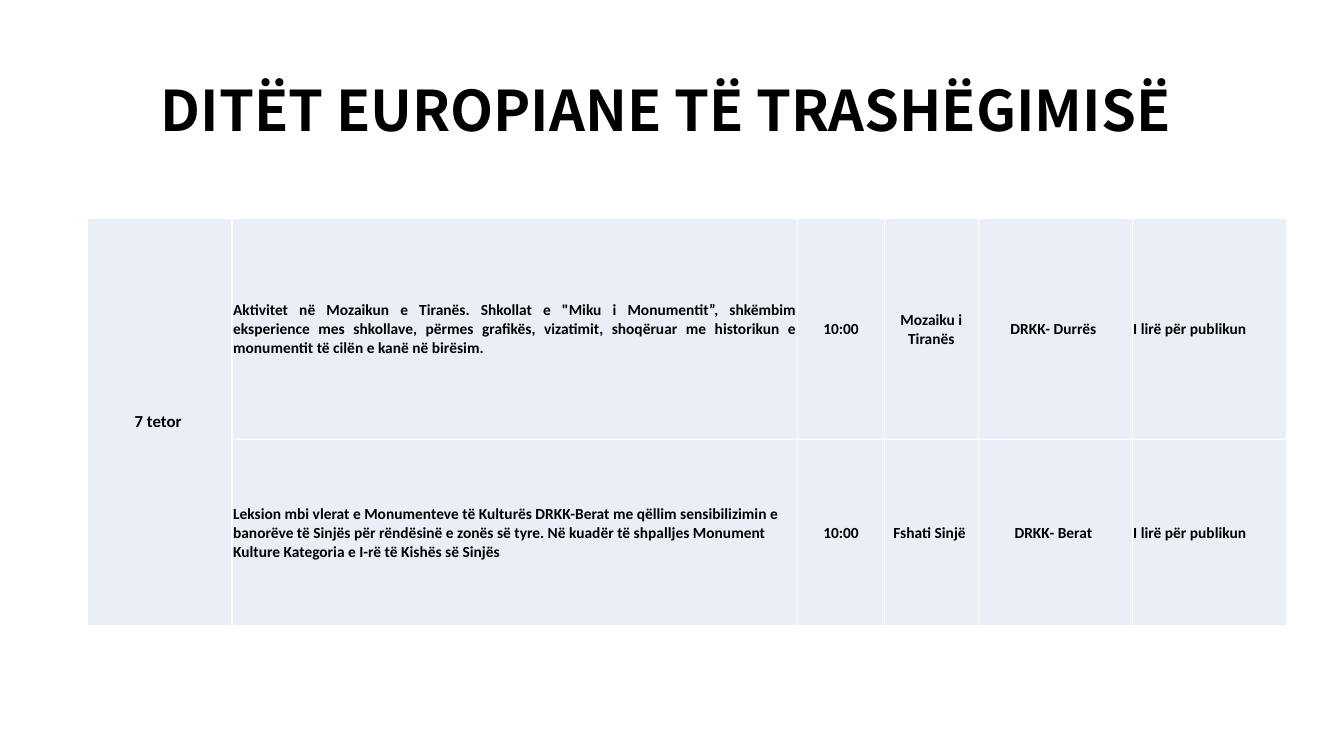
from lxml import etree
from pptx import Presentation
from pptx.dml.color import RGBColor
from pptx.enum import text
from pptx.oxml.ns import qn
from pptx.util import Pt

# Content
TITLE = "DITËT EUROPIANE TË TRASHËGIMISË "
DATE = "7 tetor "
EVENTS = [
    ('Aktivitet në Mozaikun e Tiranës. Shkollat e "Miku i Monumentit”, shkëmbim '
     "eksperience mes shkollave, përmes grafikës, vizatimit, shoqëruar me historikun "
     "e monumentit të cilën e kanë në birësim.",
     "10:00", "Mozaiku i Tiranës", "DRKK- Durrës ", "I lirë për publikun"),
    ("Leksion mbi vlerat e Monumenteve të Kulturës DRKK-Berat me qëllim sensibilizimin "
     "e banorëve të Sinjës për rëndësinë e zonës së tyre. Në kuadër të shpalljes "
     "Monument Kulture Kategoria e I-rë të Kishës së Sinjës",
     "10:00", "Fshati Sinjë ", "DRKK- Berat ", "I lirë për publikun"),
]

# Theme and layout
THEME = {
    "title_font": "Noto Sans CJK KR", "body_font": "Calibri",
    "title_size": 40, "date_size": 12, "event_size": 11,
    "ink": "000000", "cell": "EAEFF7", "border": "FFFFFF",
}
SLIDE_SIZE = (960, 540)
TITLE_BOX = (66, 28.75, 828, 104.4)
SCHEDULE_AT = (62.8, 155.8)
COLUMN_WIDTHS = (103, 404, 62, 67, 110, 110)
ROW_HEIGHTS = (158.4, 132.4)
LEFT, CENTER, JUSTIFY = (text.PP_ALIGN.LEFT, text.PP_ALIGN.CENTER, text.PP_ALIGN.JUSTIFY)
EVENT_ALIGN = [
    (JUSTIFY, CENTER, CENTER, CENTER, LEFT),
    (LEFT, CENTER, CENTER, CENTER, LEFT),
]


def format_text(frame, font_name, size, align):
    paragraph = frame.paragraphs[0]
    paragraph.alignment = align
    font = paragraph.runs[0].font
    font.name, font.size, font.bold = font_name, Pt(size), True
    font.color.rgb = RGBColor.from_string(THEME["ink"])


def style_cell(cell):
    cell.vertical_anchor = text.MSO_ANCHOR.MIDDLE
    cell.margin_left = cell.margin_right = cell.margin_top = Pt(0.75)
    cell.margin_bottom = 0
    # Borders come before the fill in the cell properties
    properties = cell._tc.get_or_add_tcPr()
    for side in ("lnL", "lnR", "lnT", "lnB"):
        border = etree.SubElement(properties, qn(f"a:{side}"), w=str(Pt(1)))
        solid = etree.SubElement(border, qn("a:solidFill"))
        etree.SubElement(solid, qn("a:srgbClr"), val=THEME["border"])
    cell.fill.solid()
    cell.fill.fore_color.rgb = RGBColor.from_string(THEME["cell"])


def fill_cell(cell, words, size, align):
    cell.text_frame.text = words
    format_text(cell.text_frame, THEME["body_font"], size, align)


def main():
    deck = Presentation()
    deck.slide_width, deck.slide_height = map(Pt, SLIDE_SIZE)
    slide = deck.slides.add_slide(deck.slide_layouts[5])

    # Title
    title = slide.shapes.title
    title.left, title.top, title.width, title.height = map(Pt, TITLE_BOX)
    title.text_frame.text = TITLE
    title.text_frame.vertical_anchor = text.MSO_ANCHOR.MIDDLE
    title.text_frame.paragraphs[0].line_spacing = 0.9
    format_text(title.text_frame, THEME["title_font"], THEME["title_size"], CENTER)

    # Schedule grid
    schedule = slide.shapes.add_table(
        len(ROW_HEIGHTS), len(COLUMN_WIDTHS), *map(Pt, SCHEDULE_AT),
        Pt(sum(COLUMN_WIDTHS)), Pt(sum(ROW_HEIGHTS))).table
    schedule.first_row = schedule.horz_banding = False
    for column, width in zip(schedule.columns, COLUMN_WIDTHS):
        column.width = Pt(width)
    for row, height in zip(schedule.rows, ROW_HEIGHTS):
        row.height = Pt(height)
    for cell in schedule.iter_cells():
        style_cell(cell)

    # Date spanning both events
    date = schedule.cell(0, 0)
    date.merge(schedule.cell(len(EVENTS) - 1, 0))
    fill_cell(date, DATE, THEME["date_size"], CENTER)

    # Events
    for r, (event, aligns) in enumerate(zip(EVENTS, EVENT_ALIGN)):
        for c, (words, align) in enumerate(zip(event, aligns), start=1):
            fill_cell(schedule.cell(r, c), words, THEME["event_size"], align)

    deck.save("out.pptx")


if __name__ == "__main__":
    main()
